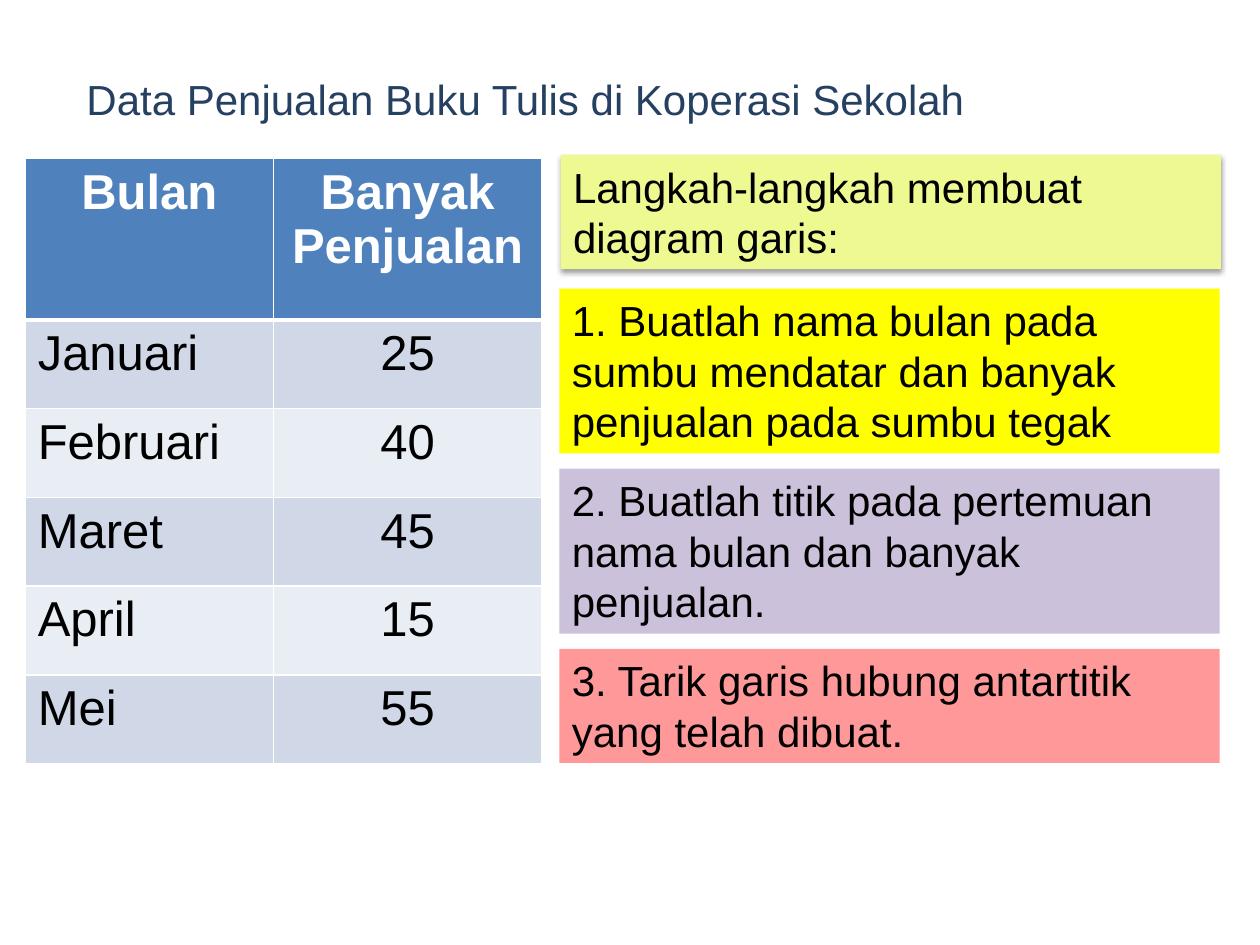
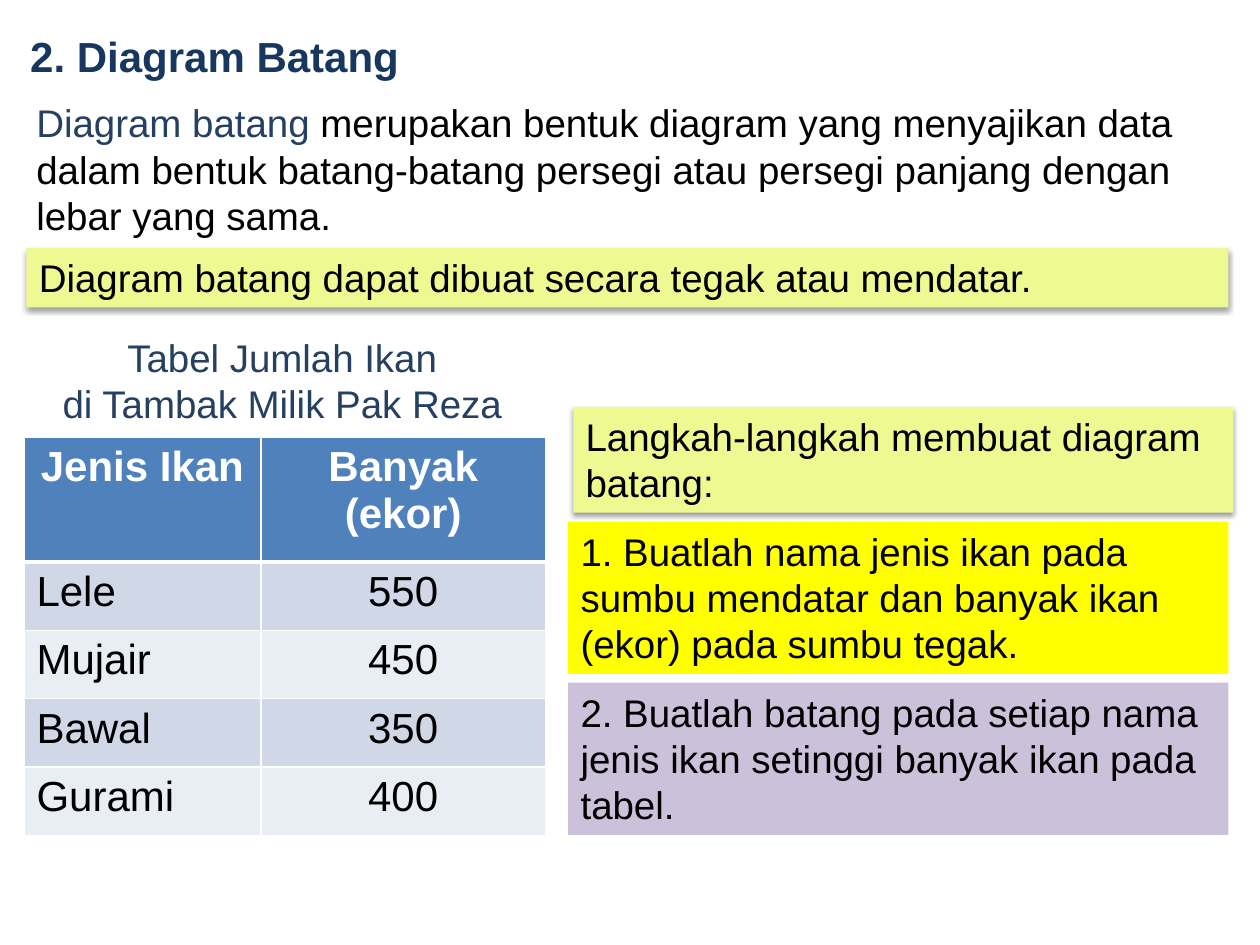
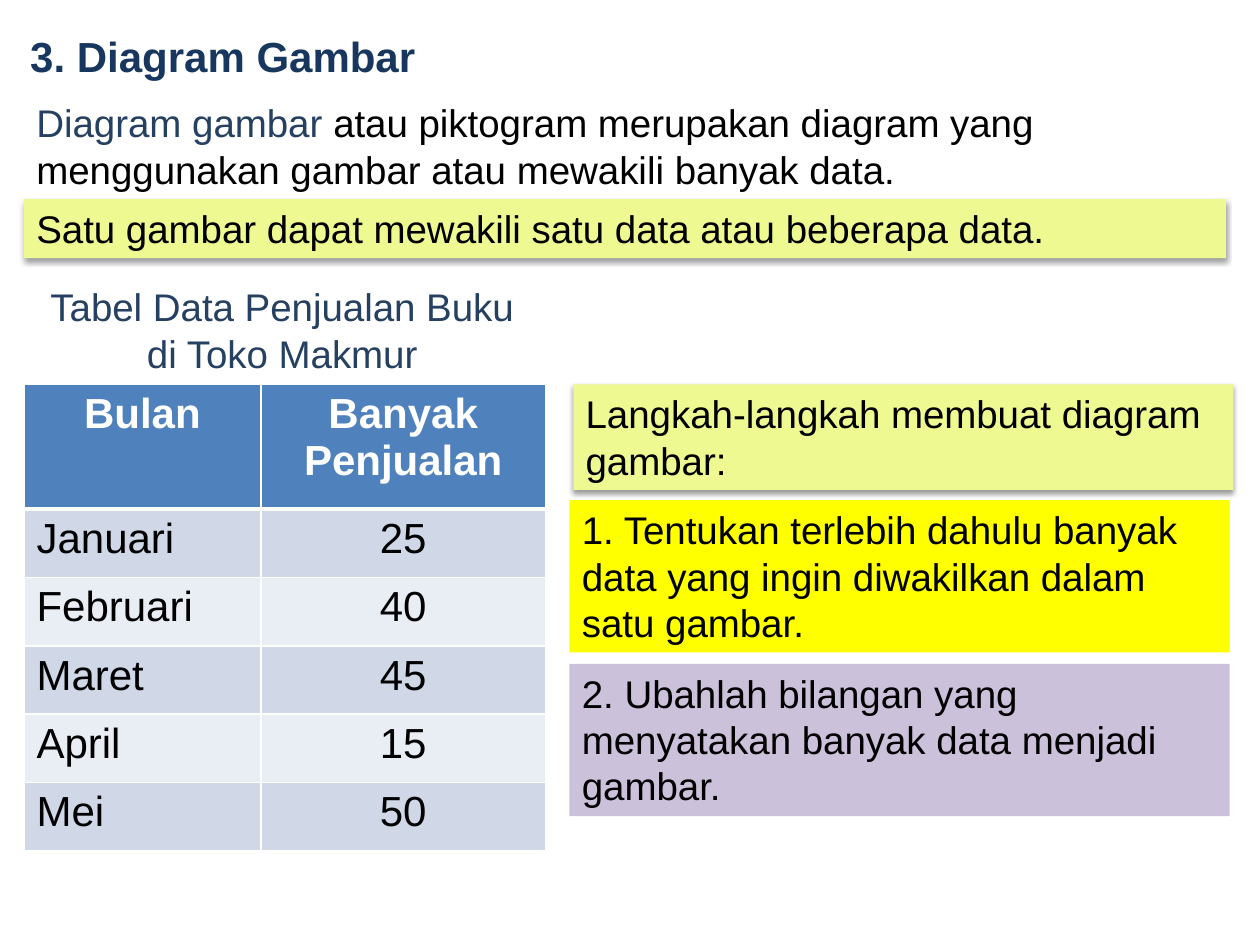
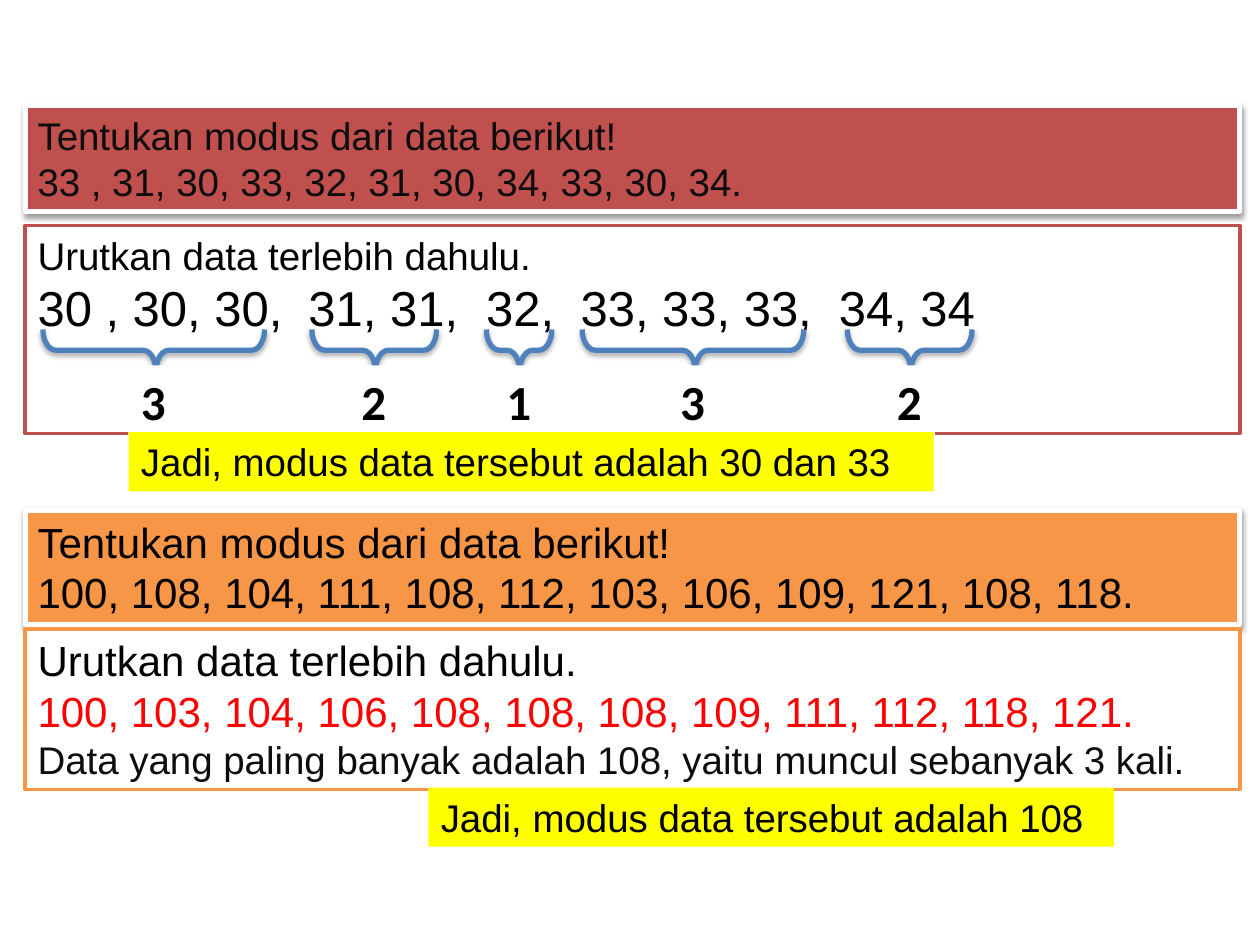
from lxml import etree
from pptx import Presentation, util as u
from pptx.dml.color import RGBColor
from pptx.enum import shapes, text
from pptx.oxml import ns

COLUMNS, ROWS = 100, 75
WHITE, BLACK, INK, NAVY, SOFT_BLACK = "FFFFFF", "000000", "254061", "17375E", "0D0D0D"
LIME, YELLOW, LILAC, PINK = "EFF991", "FFFF00", "CCC1DA", "FF9999"
BLUE, RED, ORANGE = "4F81BD", "C0504D", "F79646"
BANDS = "D0D8E8", "E9EDF4"
CENTER = text.PP_ALIGN.CENTER


def rgb(value):
    return RGBColor.from_string(value)


def child(parent, tag, **attributes):
    return etree.SubElement(parent, ns.qn(tag), {k: str(v) for k, v in attributes.items()})


def text_height(*sizes):
    """Rows taken by one line of text per given point size, with insets."""
    return 1 + sum(sizes) * 0.168


class Deck:
    def __init__(self):
        self.show = Presentation()
        self.show.slide_width, self.show.slide_height = u.Inches(10), u.Inches(7.5)
        self.slide = None
        self.size = 24

    def start(self, size, titled=True):
        """Adds a slide whose texts are of the given size unless told otherwise."""
        layout = self.show.slide_layouts[5 if titled else 6]
        self.slide, self.size = self.show.slides.add_slide(layout), size

    def across(self, columns):
        return round(self.show.slide_width * columns / COLUMNS)

    def down(self, rows):
        return round(self.show.slide_height * rows / ROWS)

    def area(self, left, top, width, height):
        return self.across(left), self.down(top), self.across(width), self.down(height)

    def fill_text(self, frame, paragraphs, align=None, **base):
        """Each paragraph is a string or a list of (string, format) runs."""
        for index, runs in enumerate(paragraphs):
            paragraph = frame.add_paragraph() if index else frame.paragraphs[0]
            paragraph.alignment = align or text.PP_ALIGN.LEFT
            for words, own in [(runs, {})] if isinstance(runs, str) else runs:
                style = dict(size=self.size, name="Arial", bold=False, color=BLACK)
                style.update(base, **own)
                color, points = style.pop("color"), style.pop("size")
                for number, line in enumerate(words.split("\n")):
                    if number:
                        paragraph.add_line_break()
                    run = paragraph.add_run()
                    run.text = line
                    for key, value in dict(style, size=u.Pt(points)).items():
                        setattr(run.font, key, value)
                    run.font.color.rgb = rgb(color)

    def frame(self, shape, **settings):
        defaults = dict(word_wrap=True, vertical_anchor=text.MSO_ANCHOR.TOP,
                        auto_size=text.MSO_AUTO_SIZE.SHAPE_TO_FIT_TEXT)
        for key, value in {**defaults, **settings}.items():
            setattr(shape.text_frame, key, value)
        return shape.text_frame

    def title(self, words, left, top, width, align=None, **style):
        holder = self.slide.shapes.title
        holder.left, holder.top, holder.width, holder.height = self.area(
            left, top, width, text_height(24))
        self.fill_text(self.frame(holder), [words], align, size=24, **style)
        return holder

    def heading(self, words, width):
        holder = self.title(words, -0.4, 1.9, width, color=NAVY, bold=True)
        self.frame(holder, word_wrap=False, margin_left=self.across(2.8))

    def shape(self, kind, place, fill=None, line=None, line_width=2, shadow=None):
        shape = self.slide.shapes.add_shape(kind, *self.area(*place))
        shape.shadow.inherit = False
        if fill:
            shape.fill.solid()
            shape.fill.fore_color.rgb = rgb(fill)
        else:
            shape.fill.background()
        if line:
            shape.line.color.rgb = rgb(line)
            shape.line.width = u.Pt(line_width)
        else:
            shape.line.fill.background()
        if shadow:
            effects = shape._element.spPr.find(ns.qn("a:effectLst"))
            outer = child(effects, "a:outerShdw", blurRad=u.Pt(3.1), dist=u.Pt(1.6),
                          dir=5400000, rotWithShape=0)
            tint = child(outer, "a:srgbClr", val=BLACK)
            child(tint, "a:alpha", val=shadow * 1000)
        return shape

    def box(self, left, top, width, height, paragraphs, fill=WHITE, align=None,
            look=None, settings=None, **style):
        shape = self.shape(shapes.MSO_SHAPE.RECTANGLE, (left, top, width, height),
                           fill, **(look or {}))
        frame = self.frame(shape, **(settings or {}))
        self.fill_text(frame, paragraphs, align, **style)
        return frame

    def note(self, left, top, width, lines, words, fill=WHITE, **options):
        """A box as tall as the given count of lines; returns its bottom."""
        height = text_height(*[self.size] * lines)
        paragraphs = [words] if isinstance(words, str) else words
        self.box(left, top, width, height, paragraphs, fill, **options)
        return top + height

    def callout(self, left, top, width, lines, words):
        self.note(left, top, width, lines, words, LIME, look=dict(shadow=38))

    def steps(self, left, top, gap, steps):
        for (lines, words), fill in zip(steps, (YELLOW, LILAC, PINK)):
            top = gap + self.note(left, top, 52.4, lines, words, fill)

    def table(self, left, top, columns, head, row, records, size):
        heights = [head] + [row] * (len(records) - 1)
        table = self.slide.shapes.add_table(
            len(records), len(columns),
            *self.area(left, top, sum(columns), sum(heights))).table
        for column, width in zip(table.columns, columns):
            column.width = self.across(width)
        for r, record in enumerate(records):
            table.rows[r].height = self.down(heights[r])
            for c, value in enumerate(record):
                cell = table.cell(r, c)
                self.borders(cell, top=3 if r == 1 else 1, bottom=1 if r else 3)
                cell.fill.solid()
                cell.fill.fore_color.rgb = rgb(BANDS[(r - 1) % 2] if r else BLUE)
                self.fill_text(cell.text_frame, [str(value)], None if r and not c else CENTER,
                               size=size, bold=not r, color=BLACK if r else WHITE)

    def borders(self, cell, top, bottom):
        properties = cell._tc.get_or_add_tcPr()
        for side, points in dict(L=1, R=1, T=top, B=bottom).items():
            edge = child(properties, f"a:ln{side}", w=u.Pt(points))
            child(child(edge, "a:solidFill"), "a:srgbClr", val=WHITE)

    def tab_stops(self, paragraph, stops):
        tabs = child(paragraph._p.get_or_add_pPr(), "a:tabLst")
        for stop in stops:
            child(tabs, "a:tab", pos=self.across(stop), algn="l")

    def brace(self, center, middle, length):
        """A curly brace that points down."""
        depth = 3.3
        brace = self.shape(shapes.MSO_SHAPE.RIGHT_BRACE,
                           (center - depth / 2, middle - length / 2, depth, length),
                           line=BLUE, line_width=3, shadow=35)
        brace.rotation = 90
        brace.adjustments[0], brace.adjustments[1] = 0.31, 0.49


def line_chart_slide(deck):
    deck.start(24)
    deck.title("Data Penjualan Buku Tulis di Koperasi Sekolah", 5.1, 5.3, 73.2,
               CENTER, color=INK)
    deck.callout(44.5, 12.3, 52.4, 2, "Langkah-langkah membuat diagram garis:")
    deck.table(2, 12.6, (19.7, 21.3), 12.8, 7.04, [
        ("Bulan", "Banyak Penjualan"), ("Januari", 25), ("Februari", 40),
        ("Maret", 45), ("April", 15), ("Mei", 55)], 28)
    deck.steps(44.4, 22.9, 1.2, [
        (3, "1. Buatlah nama bulan pada sumbu mendatar dan banyak penjualan pada sumbu tegak"),
        (3, "2. Buatlah titik pada pertemuan nama bulan dan banyak penjualan."),
        (2, "3. Tarik garis hubung antartitik yang telah dibuat.")])


def diagram_slide(deck, heading, heading_width, term, meaning, lines, remark, remark_at,
                  caption, caption_top, table_top, records, how, how_top,
                  steps_at, gap, steps):
    """A diagram type: its meaning, a remark, the data and the steps to draw it."""
    deck.start(22)
    deck.heading(heading, heading_width)
    deck.note(1.9, 7.4, 95.1, lines, [[(term, dict(color=INK)), (meaning, {})]])
    deck.callout(*remark_at, 95.4, 1, remark)
    deck.note(1.9, caption_top, 41, 2, caption, align=CENTER, color=INK)
    deck.callout(45.5, how_top, 52.4, 2, how)
    deck.table(1.9, table_top, (18.8, 22.6), 9.9, 5.43, records, 24)
    deck.steps(*steps_at, gap, [(3, words) for words in steps])


def mode_slide(deck):
    deck.start(22, titled=False)
    left, width = 2, 96.4
    question = "Tentukan modus dari data berikut!"
    order = "Urutkan data terlebih dahulu."
    framed = dict(line=WHITE, line_width=3, shadow=38)

    deck.note(left, 8.4, width, 2, [question, "33 , 31, 30, 33, 32, 31, 30, 34, 33, 30, 34."],
              RED, look=framed, color=SOFT_BLACK)
    deck.box(left, 40.5, width, text_height(24, 24),
             [question, "100, 108, 104, 111, 108, 112, 103, 106, 109, 121, 108, 118."],
             ORANGE, look=framed, size=24)
    deck.box(left, 49.9, width, text_height(24, 24, 22), [
        order,
        [("100, 103, 104, 106, 108, 108, 108, 109, 111, 112, 118, 121.", dict(color="FF0000"))],
        [("Data yang paling banyak adalah 108, yaitu muncul sebanyak 3 kali.",
          dict(size=22, color=SOFT_BLACK))]], look=dict(line=ORANGE), size=24)

    # values, start of the values, centre and length of the brace, count
    groups = [("30 , 30, 30,", 0, 12.2, 17.6, 3), ("31, 31,", 21.5, 29.7, 9.9, 2),
              ("32,", 35.6, 41.2, 5.2, 1), ("33, 33, 33,", 43.1, 55, 17.6, 3),
              ("34, 34", 63.6, 72.2, 9.9, 2)]
    values, starts, *_ = zip(*groups)
    ordered = deck.box(left, 17.9, width, 16.5, [order, [("\t".join(values), dict(size=28))]],
                       look=dict(line=RED), settings=dict(auto_size=text.MSO_AUTO_SIZE.NONE))
    deck.tab_stops(ordered.paragraphs[1], starts[1:])
    for _, _, center, length, count in groups:
        deck.brace(center, 27.8, length)
        deck.box(center - 2, 29, 4, text_height(28), [str(count)],
                 settings=dict(word_wrap=False), size=28, name="Calibri", bold=True)

    deck.note(34, 62.5, 54.4, 1, "Jadi, modus data tersebut adalah 108", YELLOW)
    deck.note(10.2, 34.3, 63.9, 1, "Jadi, modus data tersebut adalah 30 dan 33", YELLOW)


def main():
    deck = Deck()
    line_chart_slide(deck)
    diagram_slide(
        deck, "2. Diagram Batang", 33.4, "Diagram batang ",
        "merupakan bentuk diagram yang menyajikan data dalam bentuk batang-batang "
        "persegi atau persegi panjang dengan lebar yang sama.", 3,
        "Diagram batang dapat dibuat secara tegak atau mendatar.", (2.1, 19.7),
        "Tabel Jumlah Ikan\ndi Tambak Milik Pak Reza", 26, 34.7,
        [("Jenis Ikan", "Banyak (ekor)"), ("Lele", 550), ("Mujair", 450),
         ("Bawal", 350), ("Gurami", 400)],
        "Langkah-langkah membuat diagram batang:", 32.3, (45.1, 41.4), 0.7,
        ["1. Buatlah nama jenis ikan pada sumbu mendatar dan banyak ikan (ekor) "
         "pada sumbu tegak.",
         "2. Buatlah batang pada setiap nama jenis ikan setinggi banyak ikan pada tabel."])
    diagram_slide(
        deck, "3. Diagram Gambar", 34.7, "Diagram gambar ",
        "atau piktogram merupakan diagram yang menggunakan gambar atau mewakili "
        "banyak data.", 2,
        "Satu gambar dapat mewakili satu data atau beberapa data.", (1.9, 15.8),
        "Tabel Data Penjualan Buku di Toko Makmur", 22, 30.5,
        [("Bulan", "Banyak Penjualan"), ("Januari", 25), ("Februari", 40),
         ("Maret", 45), ("April", 15), ("Mei", 50)],
        "Langkah-langkah membuat diagram gambar:", 30.5, (45.2, 39.7), 0.9,
        ["1. Tentukan terlebih dahulu banyak data yang ingin diwakilkan dalam satu gambar.",
         "2. Ubahlah bilangan yang menyatakan banyak data menjadi gambar."])
    mode_slide(deck)
    deck.show.save("out.pptx")


if __name__ == "__main__":
    main()
